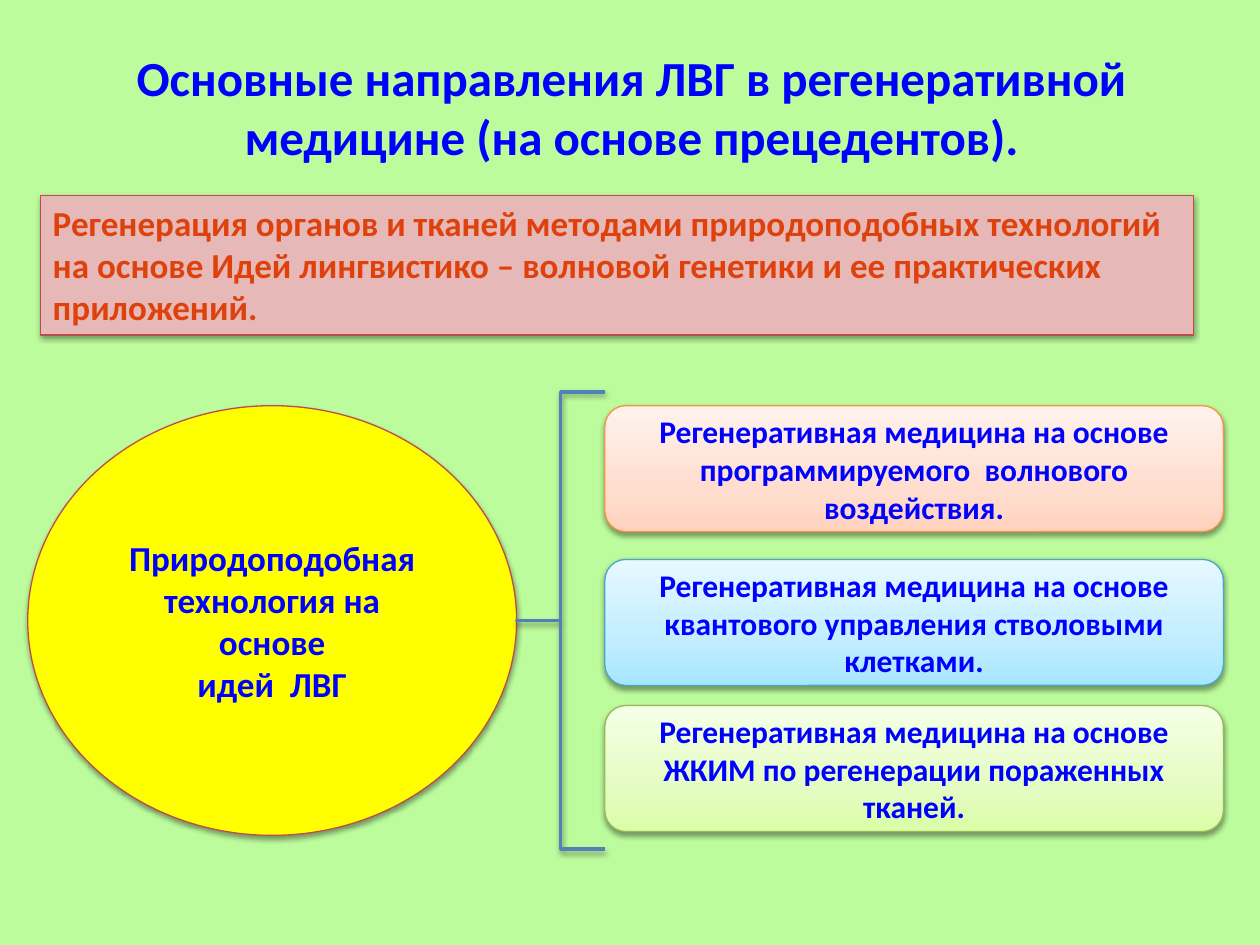
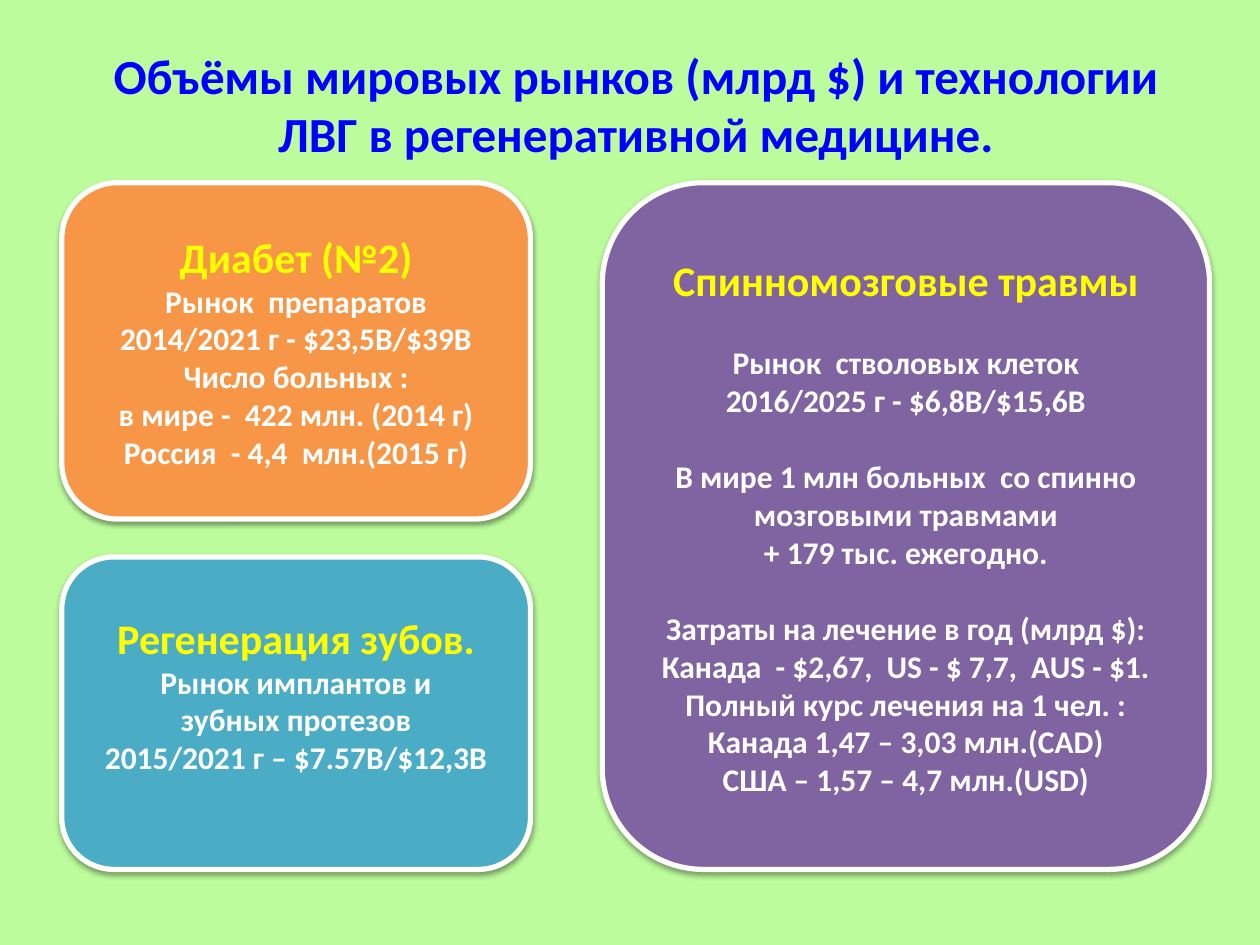
from copy import deepcopy
from dataclasses import dataclass

from lxml.etree import SubElement
from pptx import Presentation
from pptx.dml.color import RGBColor
from pptx.enum.shapes import MSO_SHAPE
from pptx.enum.text import MSO_ANCHOR, MSO_AUTO_SIZE, PP_ALIGN
from pptx.oxml.ns import qn
from pptx.util import Inches, Pt


@dataclass(frozen=True)
class Theme:
    font: str = "Calibri"
    background: str = "BDFC9D"
    blue: str = "0000FF"
    yellow: str = "FFFF00"
    white: str = "FFFFFF"
    red: str = "DF410D"
    pink: str = "E6B9B8"
    outline_red: str = "BF4C48"
    brace: str = "4F81BD"
    title_size: int = 28
    heading_size: int = 24
    lead_size: int = 20
    body_size: int = 18
    group_gap: int = 22
    thin_line: float = 0.75
    brace_line: float = 2
    card_line: float = 3


THEME = Theme()

# Slide 1: one idea that branches into three directions
DIRECTIONS_TITLE = "Основные направления ЛВГ в регенеративной медицине (на основе прецедентов)."
SUMMARY = ("Регенерация органов и тканей методами природоподобных технологий "
           "на основе Идей лингвистико – волновой генетики и ее практических приложений.")
CORE_IDEA = ["Природоподобная технология на основе", "идей  ЛВГ"]
DIRECTIONS = [  # top, line colour, gradient from bottom to top, text
    (3.22, "F69240", ("FFD2BD", "FFDED0", "FFF2ED"),
     "Регенеративная медицина на основе программируемого  волнового воздействия."),
    (4.44, "46AAC5", ("A7E6FF", "C1EDFF", "E7F8FF"),
     "Регенеративная медицина на основе квантового управления стволовыми клетками."),
    (5.6, "98B955", ("DAFDA7", "E4FCC2", "F5FFE7"),
     "Регенеративная медицина на основе ЖКИМ по регенерации пораженных тканей."),
]
GRADIENT_POSITIONS = (0, 0.35, 1)
DIRECTION_LEFT, DIRECTION_WIDTH, DIRECTION_HEIGHT = 4.8, 4.91, 1
CORE_BOX = (0.22, 3.22, 3.88, 3.41)
BRACE_OVERHANG = 0.11

# Slide 2: cards; each card is a list of paragraph groups, headed by its first line
MARKETS_TITLE = "Объёмы мировых рынков (млрд $) и технологии ЛВГ в регенеративной медицине."
DIABETES = [["Диабет (№2)", "Рынок  препаратов", "2014/2021 г - $23,5B/$39B",
             "Число больных :", "в мире -  422 млн. (2014 г)", "Россия  - 4,4  млн.(2015 г)"]]
TEETH = [["Регенерация зубов.", "Рынок имплантов и", "зубных протезов",
          "2015/2021 г – $7.57B/$12,3B"]]
SPINE = [
    ["Спинномозговые травмы"],
    ["Рынок  стволовых клеток", "2016/2025 г - $6,8B/$15,6B"],
    ["В мире 1 млн больных  со спинно мозговыми травмами", "+ 179 тыс. ежегодно."],
    ["Затраты на лечение в год (млрд $):", "Канада  - $2,67,  US - $ 7,7,  AUS - $1.",
     "Полный курс лечения на 1 чел. :", "Канада 1,47 – 3,03 млн.(CAD)",
     "США – 1,57 – 4,7 млн.(USD)"],
]
CARD_LEFT, CARD_TOP, CARD_BOTTOM = 0.49, 1.45, 6.9
COLUMN_WIDTHS, COLUMN_GAP = (3.72, 4.82), 0.57
UPPER_HEIGHT, ROW_GAP = 2.67, 0.3


def write(shape, groups, size=THEME.body_size, color=THEME.blue, align=PP_ALIGN.CENTER,
          anchor=MSO_ANCHOR.MIDDLE, heading=False, bottom_inset=0.05):
    """Write groups of paragraphs with a gap between groups; heading marks the first line."""
    frame = shape.text_frame
    frame.word_wrap = True
    frame.auto_size = MSO_AUTO_SIZE.NONE
    frame.vertical_anchor = anchor
    frame.margin_bottom = Inches(bottom_inset)
    paragraph = None
    for group in groups:
        for index, text in enumerate(group):
            is_first = paragraph is None
            paragraph = frame.paragraphs[0] if is_first else frame.add_paragraph()
            paragraph.alignment = align
            if index == 0 and not is_first:
                paragraph.space_before = Pt(THEME.group_gap)
            is_heading = heading and is_first
            run = paragraph.add_run()
            run.text = text
            run.font.name = THEME.font
            run.font.bold = True
            run.font.size = Pt(THEME.heading_size if is_heading else size)
            run.font.color.rgb = RGBColor.from_string(THEME.yellow if is_heading else color)


def add_shadow(shape):
    shape.shadow.inherit = False
    effects = shape._element.spPr.find(qn("a:effectLst"))
    shadow = SubElement(effects, qn("a:outerShdw"), blurRad="40000", dist="20000",
                        dir="5400000", rotWithShape="0")
    black = SubElement(shadow, qn("a:srgbClr"), val="000000")
    SubElement(black, qn("a:alpha"), val="38000")


def fill_gradient(shape, colors):
    shape.fill.gradient()
    shape.fill.gradient_angle = 90
    stop_list = shape._element.spPr.find(qn("a:gradFill")).find(qn("a:gsLst"))
    stop_list.insert(1, deepcopy(stop_list[0]))
    for stop, position, color in zip(shape.fill.gradient_stops, GRADIENT_POSITIONS, colors):
        stop.position = position
        stop.color.rgb = RGBColor.from_string(color)


def add_block(slide, kind, box, line, fill=None, line_width=THEME.thin_line):
    """Add a shadowed shape; fill is one colour, a tuple of gradient colours or None."""
    shape = slide.shapes.add_shape(kind, *map(Inches, box))
    if fill is None:
        shape.fill.background()
    elif isinstance(fill, tuple):
        fill_gradient(shape, fill)
    else:
        shape.fill.solid()
        shape.fill.fore_color.rgb = RGBColor.from_string(fill)
    shape.line.color.rgb = RGBColor.from_string(line)
    shape.line.width = Pt(line_width)
    add_shadow(shape)
    return shape


def add_slide(presentation, title, box):
    slide = presentation.slides.add_slide(presentation.slide_layouts[5])
    slide.background.fill.solid()
    slide.background.fill.fore_color.rgb = RGBColor.from_string(THEME.background)
    placeholder = slide.shapes.title
    placeholder.left, placeholder.top, placeholder.width, placeholder.height = map(Inches, box)
    write(placeholder, [[title]], size=THEME.title_size)
    return slide


def build_directions(presentation):
    slide = add_slide(presentation, DIRECTIONS_TITLE, (0.32, 0.27, 9.38, 1.15))
    core = add_block(slide, MSO_SHAPE.OVAL, CORE_BOX, THEME.outline_red, THEME.yellow)
    write(core, [CORE_IDEA], size=THEME.lead_size)

    for top, line, gradient, text in DIRECTIONS:
        box = (DIRECTION_LEFT, top, DIRECTION_WIDTH, DIRECTION_HEIGHT)
        direction = add_block(slide, MSO_SHAPE.ROUNDED_RECTANGLE, box, line, gradient)
        write(direction, [[text]])

    left, top, width, height = CORE_BOX
    brace_left = left + width
    brace_box = (brace_left, top - BRACE_OVERHANG,
                 DIRECTION_LEFT - brace_left, height + 2 * BRACE_OVERHANG)
    brace = add_block(slide, MSO_SHAPE.LEFT_BRACE, brace_box, THEME.brace,
                      line_width=THEME.brace_line)
    brace.adjustments[0] = 0

    summary = add_block(slide, MSO_SHAPE.RECTANGLE, (0.32, 1.55, 9.15, 1.11),
                        THEME.outline_red, THEME.pink)
    write(summary, [[SUMMARY]], size=THEME.lead_size, color=THEME.red,
          align=PP_ALIGN.LEFT, anchor=MSO_ANCHOR.TOP)


def build_markets(presentation):
    slide = add_slide(presentation, MARKETS_TITLE, (0.49, 0.43, 9.11, 0.79))
    narrow, wide = COLUMN_WIDTHS
    right_left = CARD_LEFT + narrow + COLUMN_GAP
    lower_top = CARD_TOP + UPPER_HEIGHT + ROW_GAP
    cards = [  # box, fill, text, bottom inset
        ((right_left, CARD_TOP, wide, CARD_BOTTOM - CARD_TOP), "8064A2", SPINE, 0.05),
        ((CARD_LEFT, CARD_TOP, narrow, UPPER_HEIGHT), "F79646", DIABETES, 0.05),
        ((CARD_LEFT, lower_top, narrow, CARD_BOTTOM - lower_top), "4BACC6", TEETH, 0.35),
    ]
    for box, fill, groups, bottom_inset in cards:
        card = add_block(slide, MSO_SHAPE.ROUNDED_RECTANGLE, box, THEME.white, fill,
                         THEME.card_line)
        write(card, groups, color=THEME.white, heading=True, bottom_inset=bottom_inset)


def main():
    presentation = Presentation()
    presentation.slide_width = Inches(10)
    presentation.slide_height = Inches(7.5)
    build_directions(presentation)
    build_markets(presentation)
    presentation.save("out.pptx")


if __name__ == "__main__":
    main()
